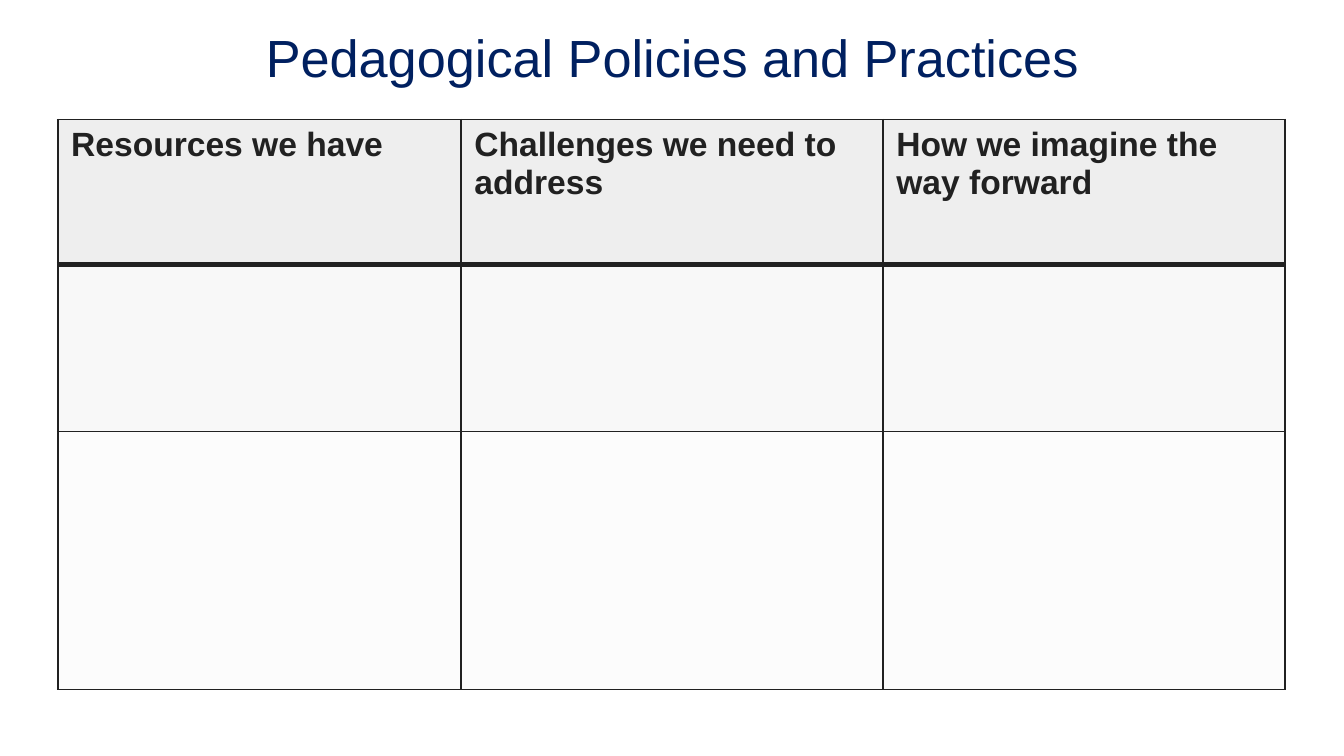
from dataclasses import dataclass

from lxml.etree import SubElement
from pptx import Presentation
from pptx.dml.color import RGBColor as Rgb
from pptx.enum.text import MSO_ANCHOR as Anchor, MSO_AUTO_SIZE as AutoSize, PP_ALIGN as Align
from pptx.oxml.ns import qn
from pptx.util import Inches, Pt


@dataclass(frozen=True)
class Theme:
    font: str = "Arial"
    background: str = "FFFFFF"
    title_color: str = "002060"
    ink: str = "212121"
    row_fills: tuple = ("EEEEEE", "F8F8F8", "FCFCFC")
    title_size: int = 28
    heading_size: int = 18
    rule: int = 1
    heading_rule: int = 3


THEME = Theme()
SLIDE_WIDTH = 10
SLIDE_HEIGHT = SLIDE_WIDTH * 9 / 16
COLUMN_WIDTHS = (3, 3.14, 2.99)
ROW_HEIGHTS = (1.08, 1.24, 1.92)
TABLE_LEFT, TABLE_TOP = 0.43, 0.89
HEADINGS = (
    "Resources we have",
    "Challenges we need to address",
    "How we imagine the way forward",
)


def add_run(paragraph, text, size, color, bold=False):
    run = paragraph.add_run()
    run.text = text
    run.font.name = THEME.font
    run.font.size = Pt(size)
    run.font.bold = bold
    run.font.color.rgb = Rgb.from_string(color)


def set_title(slide, text):
    title = slide.shapes.title
    width = 9.32
    title.left, title.top = Inches((SLIDE_WIDTH - width) / 2), Inches(0.09)
    title.width, title.height = Inches(width), Inches(0.63)
    frame = title.text_frame
    frame.auto_size = AutoSize.NONE
    frame.word_wrap = True
    frame.vertical_anchor = Anchor.TOP
    frame.margin_left = frame.margin_right = Inches(0.1)
    frame.margin_top = frame.margin_bottom = Inches(0.1)
    paragraph = frame.paragraphs[0]
    paragraph.alignment = Align.CENTER
    add_run(paragraph, text, THEME.title_size, THEME.title_color)


def set_borders(cell, top, bottom):
    properties = cell._tc.get_or_add_tcPr()
    sides = {"lnL": THEME.rule, "lnR": THEME.rule, "lnT": top, "lnB": bottom}
    for position, (side, width) in enumerate(sides.items()):
        border = SubElement(properties, qn(f"a:{side}"), w=str(Pt(width)))
        fill = SubElement(border, qn("a:solidFill"))
        SubElement(fill, qn("a:srgbClr"), val=THEME.ink)
        properties.insert(position, border)


def add_planning_table(slide):
    frame = slide.shapes.add_table(
        len(ROW_HEIGHTS), len(COLUMN_WIDTHS),
        Inches(TABLE_LEFT), Inches(TABLE_TOP),
        Inches(sum(COLUMN_WIDTHS)), Inches(sum(ROW_HEIGHTS)),
    )
    table = frame.table
    for column, column_width in zip(table.columns, COLUMN_WIDTHS):
        column.width = Inches(column_width)
    for index, (row, row_height) in enumerate(zip(table.rows, ROW_HEIGHTS)):
        row.height = Inches(row_height)
        top = THEME.heading_rule if index == 1 else THEME.rule
        bottom = THEME.heading_rule if index == 0 else THEME.rule
        for cell in row.cells:
            cell.fill.solid()
            cell.fill.fore_color.rgb = Rgb.from_string(THEME.row_fills[index])
            set_borders(cell, top, bottom)
    for cell, heading in zip(table.rows[0].cells, HEADINGS):
        add_run(cell.text_frame.paragraphs[0], heading,
                THEME.heading_size, THEME.ink, bold=True)


def main():
    deck = Presentation()
    deck.slide_width, deck.slide_height = Inches(SLIDE_WIDTH), Inches(SLIDE_HEIGHT)
    slide = deck.slides.add_slide(deck.slide_layouts[5])
    background = slide.background.fill
    background.solid()
    background.fore_color.rgb = Rgb.from_string(THEME.background)
    set_title(slide, "Pedagogical Policies and Practices")
    add_planning_table(slide)
    deck.save("out.pptx")


if __name__ == "__main__":
    main()
